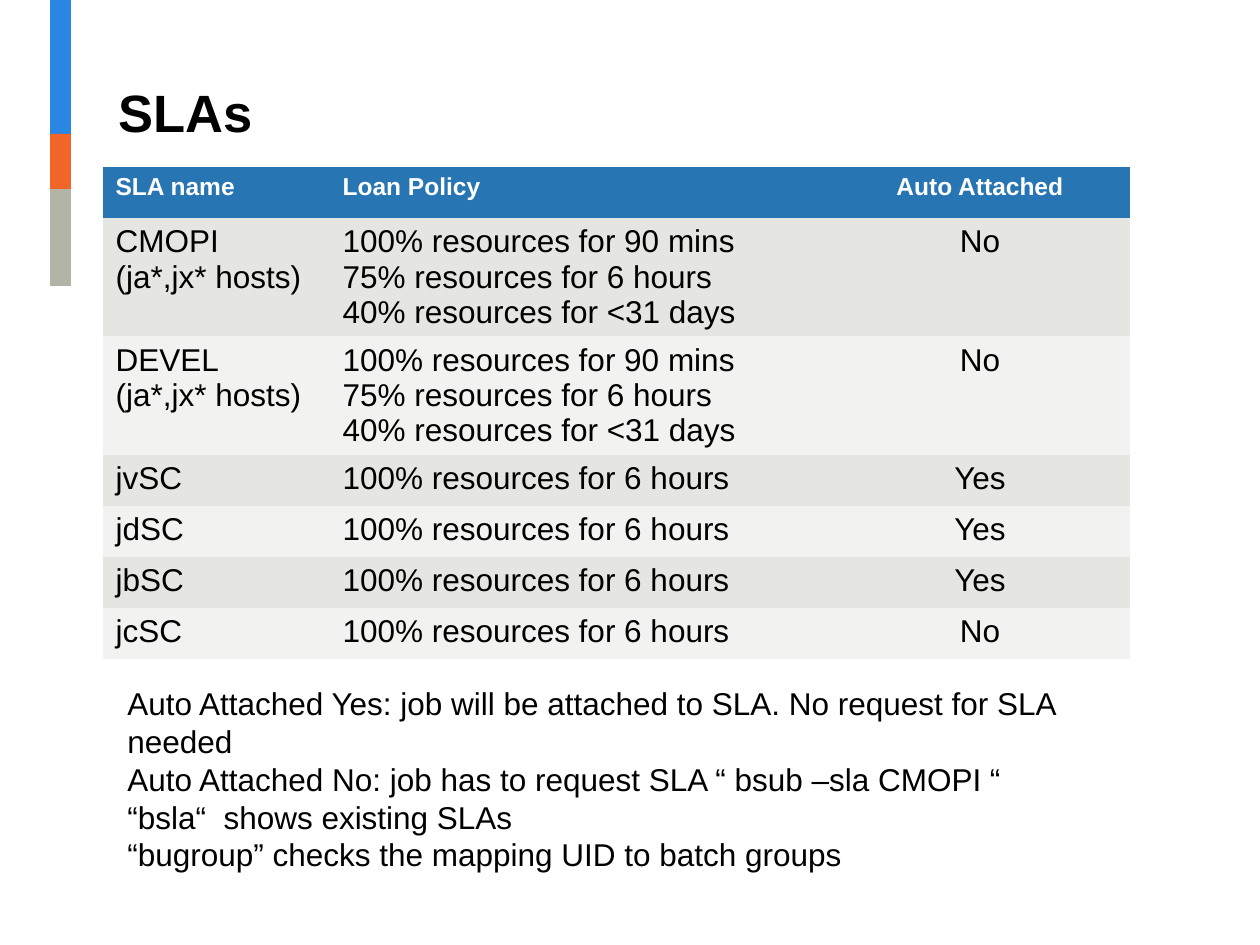
from pptx import Presentation
from pptx.dml.color import RGBColor
from pptx.enum.shapes import MSO_SHAPE as Shape
from pptx.enum.text import MSO_ANCHOR as Anchor, MSO_AUTO_SIZE as AutoSize, PP_ALIGN as Align
from pptx.util import Emu, Pt

# Content
TITLE = "SLAs"
HEADER = ("SLA name", "Loan Policy", "Auto Attached")
HOSTS = "(ja*,jx* hosts)"
TIERED = ["100% resources for 90 mins", "75% resources for 6 hours",
          "40% resources for <31 days"]
FLAT = ["100% resources for 6 hours"]
SLAS = [
    (["CMOPI", HOSTS], TIERED, "No"),
    (["DEVEL", HOSTS], TIERED, "No"),
    (["jvSC"], FLAT, "Yes"),
    (["jdSC"], FLAT, "Yes"),
    (["jbSC"], FLAT, "Yes"),
    (["jcSC"], FLAT, "No"),
]
NOTES = [
    "Auto Attached Yes: job will be attached to SLA. No request for SLA needed",
    "Auto Attached No: job has to request SLA “ bsub –sla CMOPI “",
    "“bsla“  shows existing SLAs",
    "“bugroup” checks the mapping UID to batch groups",
]

# Layout in px
STRIPES = [(134, "2986E2"), (55, "F26529"), (97, "B3B3A6")]
COLUMNS = (227, 500, 300)
ALIGNS = (Align.LEFT, Align.LEFT, Align.CENTER)
ROW, TALL_ROW = 51, 118
HEADER_FILL, BANDS = "2875B4", ("E5E5E1", "F2F2F1")


def px(length):
    return Emu(length * 914400 // 126)


def color(value):
    return RGBColor.from_string(value)


def write(frame, lines, size, ink="000000", bold=False, align=Align.LEFT):
    for index, line in enumerate(lines):
        para = frame.paragraphs[0] if index == 0 else frame.add_paragraph()
        para.alignment = align
        span = para.add_run()
        span.text = line
        span.font.name = "Arial"
        span.font.size = Pt(size)
        span.font.bold = bold
        span.font.color.rgb = color(ink)


deck = Presentation()
deck.slide_width, deck.slide_height = px(1260), px(945)
page = deck.slides.add_slide(deck.slide_layouts[5])

# Side stripes
top = 0
for height, fill in STRIPES:
    stripe = page.shapes.add_shape(Shape.RECTANGLE, px(50), px(top), px(21), px(height))
    stripe.shadow.inherit = False
    stripe.fill.solid()
    stripe.fill.fore_color.rgb = color(fill)
    stripe.line.fill.background()
    top += height

# Title
title = page.shapes.title
title.left, title.top, title.width, title.height = px(106), px(41), px(1058), px(108)
title.text_frame.auto_size = AutoSize.NONE
title.text_frame.vertical_anchor = Anchor.BOTTOM
write(title.text_frame, [TITLE], 30, bold=True)

# SLA table
heights = [ROW] + [TALL_ROW if len(policy) > 1 else ROW for _, policy, _ in SLAS]
table = page.shapes.add_table(len(heights), len(COLUMNS), px(103), px(167),
                              px(sum(COLUMNS)), px(sum(heights))).table
for column, width in zip(table.columns, COLUMNS):
    column.width = px(width)
for row, height in zip(table.rows, heights):
    row.height = px(height)

rows = [[[label] for label in HEADER]]
rows += [[names, policy, [attached]] for names, policy, attached in SLAS]
for r, cells in enumerate(rows):
    for c, lines in enumerate(cells):
        cell = table.cell(r, c)
        cell.fill.solid()
        if r == 0:
            cell.fill.fore_color.rgb = color(HEADER_FILL)
            write(cell.text_frame, lines, 14, "FFFFFF", True, ALIGNS[c])
        else:
            cell.fill.fore_color.rgb = color(BANDS[(r - 1) % 2])
            write(cell.text_frame, lines, 18, align=ALIGNS[c])
# Cell fills stand alone, without the white rules of the banded style
style = table._tbl.tblPr.find(
    "{http://schemas.openxmlformats.org/drawingml/2006/main}tableStyleId")
style.text = "{2D5ABB26-0587-4C30-8999-92F81FD0307C}"

# Notes
box = page.shapes.add_textbox(px(115), px(678), px(1017), px(204))
box.text_frame.word_wrap = True
box.text_frame.auto_size = AutoSize.SHAPE_TO_FIT_TEXT
write(box.text_frame, NOTES, 18)

deck.save("out.pptx")
